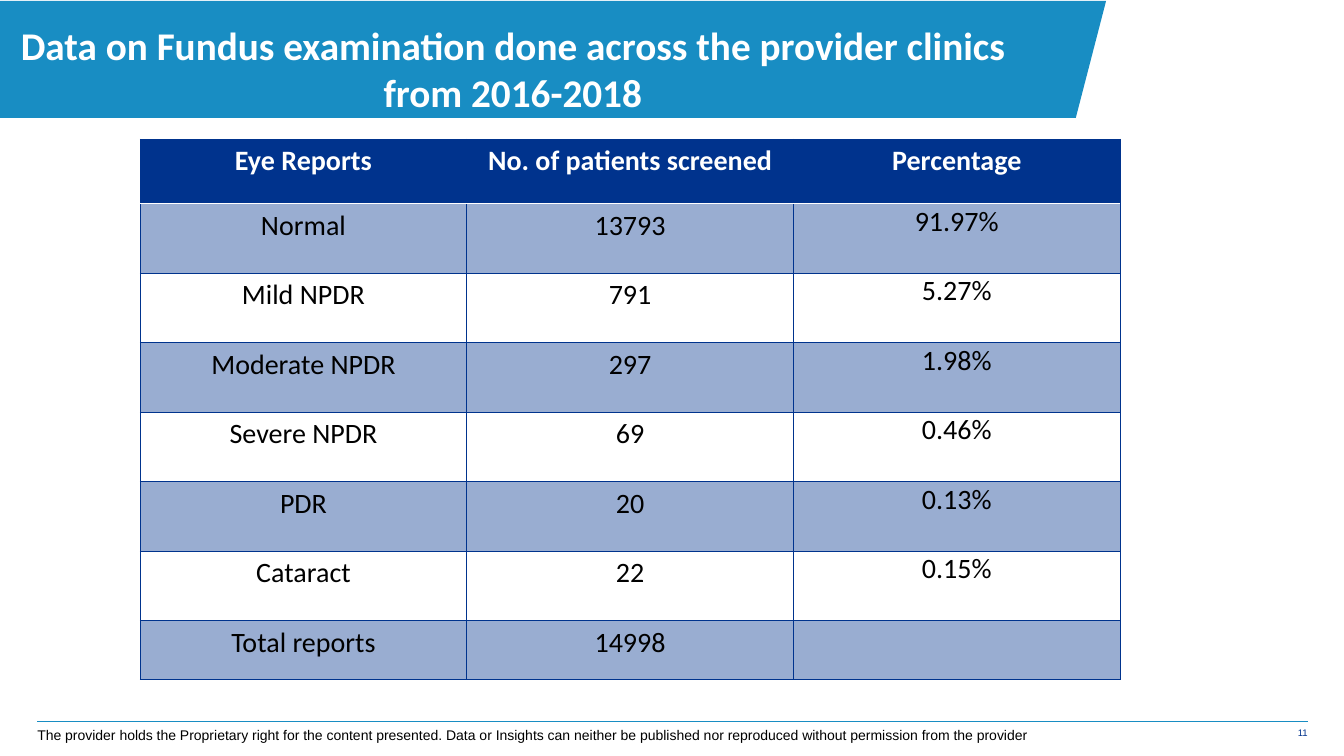
import pptx
import pptx.util
import pptx.dml.color
import pptx.enum.shapes
import pptx.enum.text
import pptx.oxml
import pptx.oxml.ns

Inches = pptx.util.Inches
Pt = pptx.util.Pt
ALIGN = pptx.enum.text.PP_ALIGN
ANCHOR = pptx.enum.text.MSO_ANCHOR

NAVY, BLUE, WHITE, BLACK = "00338D", "188DC3", "FFFFFF", "000000"

HEADINGS = ("Eye Reports", "No. of patients screened", "Percentage")
REPORTS = (
    ("Normal", "13793", "91.97%"),
    ("Mild NPDR", "791", "5.27%"),
    ("Moderate NPDR", "297", "1.98%"),
    ("Severe NPDR", "69", "0.46%"),
    ("PDR", "20", "0.13%"),
    ("Cataract", "22", "0.15%"),
    ("Total reports", "14998", ""),
)


def rgb(colour):
    return pptx.dml.color.RGBColor.from_string(colour)


def add_element(parent, tag, **attributes):
    child = pptx.oxml.parse_xml(f"<a:{tag} {pptx.oxml.ns.nsdecls('a')}/>")
    for name, value in attributes.items():
        child.set(name, str(value))
    parent.append(child)
    return child


def add_run(p, text, size, colour, font="Calibri", bold=False):
    r = p.add_run()
    r.text = text
    r.font.name, r.font.size, r.font.bold = font, Pt(size), bold
    r.font.color.rgb = rgb(colour)


def set_margins(target, left=0, top=0, right=0, bottom=0):
    target.margin_left, target.margin_top = Inches(left), Inches(top)
    target.margin_right, target.margin_bottom = Inches(right), Inches(bottom)


def place(sp, left, top, width, height):
    sp.left, sp.top = Inches(left), Inches(top)
    sp.width, sp.height = Inches(width), Inches(height)


def add_banner(s):
    builder = s.shapes.build_freeform(Inches(10.97), Inches(0.01))
    corners = ((-0.02, 0.01), (-0.02, 1.17), (10.67, 1.17))
    builder.add_line_segments([(Inches(x), Inches(y)) for x, y in corners])
    sp = builder.convert_to_shape()
    sp.shadow.inherit = False
    sp.fill.solid()
    sp.fill.fore_color.rgb = rgb(BLUE)
    sp.line.fill.background()
    # The title lies in front of the banner
    s.shapes.title.element.addprevious(sp.element)


def set_title(s, text):
    sp = s.shapes.title
    place(sp, 0, 0.2, 10.17, 0.95)
    tf = sp.text_frame
    tf.word_wrap = True
    tf.auto_size = pptx.enum.text.MSO_AUTO_SIZE.NONE
    tf.vertical_anchor = ANCHOR.MIDDLE
    set_margins(tf)
    p = tf.paragraphs[0]
    p.alignment = ALIGN.CENTER
    add_run(p, text, 28, WHITE, bold=True)


def add_label(s, text, box, size, colour, align, top=0):
    sp = s.shapes.add_textbox(*map(Inches, box))
    tf = sp.text_frame
    tf.word_wrap = True
    set_margins(tf, top=top)
    p = tf.paragraphs[0]
    p.alignment = align
    add_run(p, text, size, colour, font="Arial")


def add_rule(s):
    line = s.shapes.add_connector(
        pptx.enum.shapes.MSO_CONNECTOR.STRAIGHT,
        Inches(0.37), Inches(7.15), Inches(12.97), Inches(7.15))
    line.line.color.rgb = rgb(BLUE)
    line.line.width = Pt(0.25)
    add_element(line.element.spPr, "effectLst")


def set_borders(cell, row):
    tcPr = cell._tc.get_or_add_tcPr()
    for side in "LRTB":
        under_header = (row, side) in ((0, "B"), (1, "T"))
        colour, width = (WHITE, 1) if under_header else (NAVY, 0.5)
        ln = add_element(tcPr, "ln" + side, w=int(Pt(width)))
        add_element(add_element(ln, "solidFill"), "srgbClr", val=colour)


def set_fill(cell, row):
    if row and row % 2 == 0:
        cell.fill.background()
        return
    cell.fill.solid()
    cell.fill.fore_color.rgb = rgb(NAVY)
    if row:
        fill = cell._tc.tcPr.findall(pptx.oxml.ns.qn("a:solidFill"))[0]
        add_element(fill[0], "alpha", val=40000)


def add_report_table(s):
    heights = [0.64] + [0.69] * 6 + [0.58]
    rows = (HEADINGS,) + REPORTS
    table = s.shapes.add_table(
        len(rows), len(HEADINGS), Inches(1.39), Inches(1.38),
        Inches(9.73), Inches(sum(heights))).table
    table.first_row = table.horz_banding = False
    for column in table.columns:
        column.width = Inches(3.24)
    for i, (texts, height) in enumerate(zip(rows, heights)):
        table.rows[i].height = Inches(height)
        for j, text in enumerate(texts):
            cell = table.cell(i, j)
            set_borders(cell, i)
            set_fill(cell, i)
            cell.vertical_anchor = ANCHOR.TOP
            if i and j == 2:
                set_margins(cell, 0.01, 0.01, 0.01)
            p = cell.text_frame.paragraphs[0]
            p.alignment = ALIGN.CENTER
            if text:
                add_run(p, text, 20, BLACK if i else WHITE, bold=i == 0)


def main():
    prs = pptx.Presentation()
    prs.slide_width, prs.slide_height = Inches(13.33), Inches(7.5)
    s = prs.slides.add_slide(prs.slide_layouts[5])

    # Heading
    add_banner(s)
    set_title(s, "Data on Fundus examination done across the provider clinics "
                 "from 2016-2018")

    # Screening results
    add_report_table(s)

    # Footer
    add_rule(s)
    add_label(s, "11", (12.29, 7.15, 0.68, 0.31), 6.8, NAVY, ALIGN.RIGHT, top=0.06)
    add_label(s, "The provider holds the Proprietary right for the content presented. "
                 "Data or Insights can neither be published nor reproduced without "
                 "permission from the provider",
              (0.37, 7.21, 10.1, 0.17), 10, BLACK, ALIGN.LEFT)

    prs.save("out.pptx")


if __name__ == "__main__":
    main()
